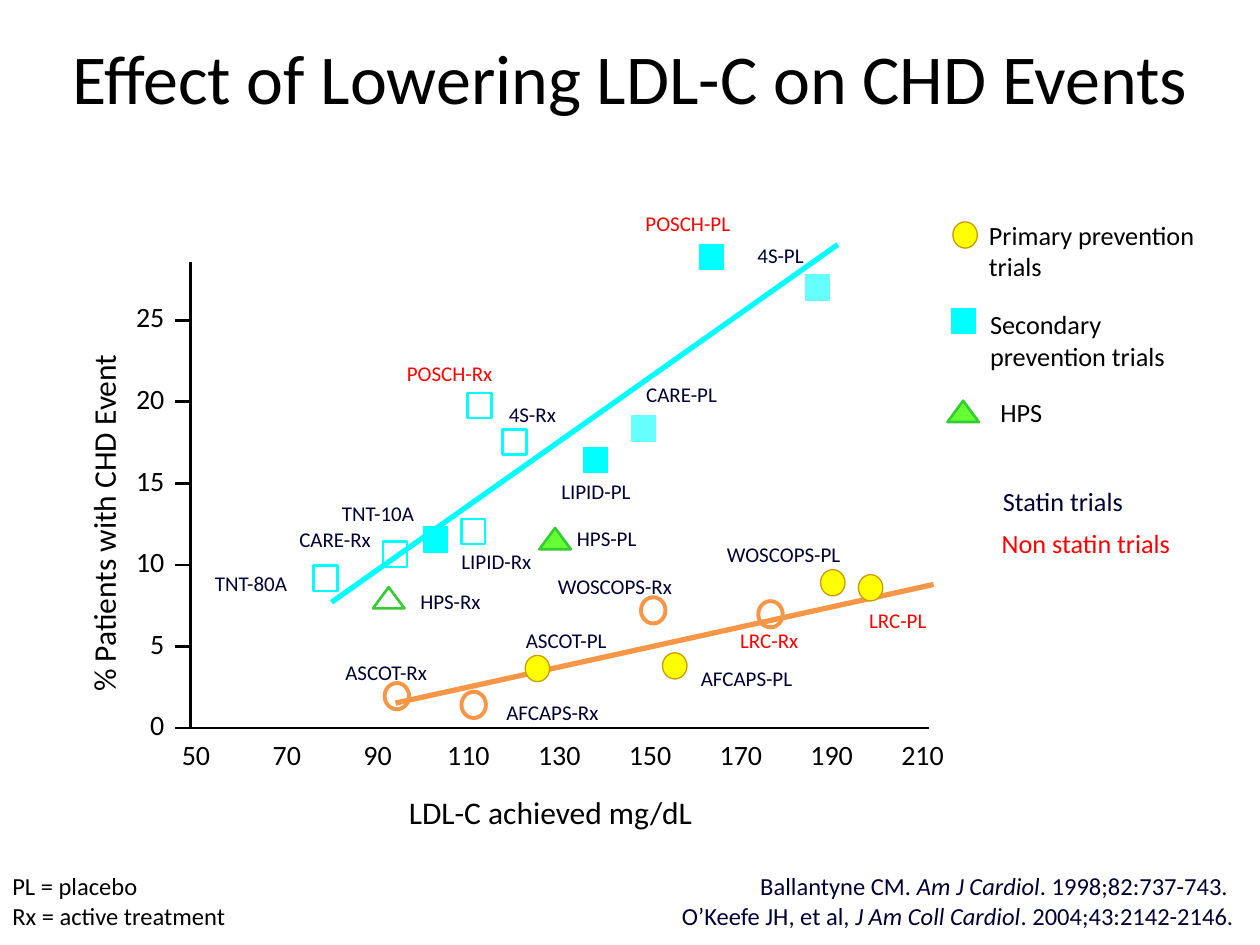
from collections import namedtuple
from dataclasses import dataclass

from lxml import etree
from pptx import Presentation
from pptx.dml.color import RGBColor
from pptx.enum import shapes, text
from pptx.oxml import ns
from pptx.util import Pt

Box = namedtuple("Box", "left top width height")
Marker = namedtuple("Marker", "kind width height fill line weight")
ALIGN = text.PP_ALIGN
ANCHOR = text.MSO_ANCHOR
KIND = shapes.MSO_SHAPE


@dataclass(frozen=True)
class Theme:
    font: str = "Calibri"
    black: str = "000000"
    navy: str = "000033"
    red: str = "FF0000"
    cyan: str = "00FFFF"
    pale_cyan: str = "66FFFF"
    orange: str = "F79646"
    yellow: str = "FFFF00"
    gold: str = "CC9900"
    green: str = "33CC33"
    lime: str = "66FF33"
    title_size: int = 40
    axis_title_size: int = 18
    tick_size: int = 16
    legend_size: int = 15
    footer_size: int = 14
    label_size: int = 12
    axis_weight: float = 1.5
    trend_weight: float = 3


THEME = Theme()
MARKERS = {
    "primary": Marker(KIND.OVAL, 14, 15, THEME.yellow, THEME.gold, 0.75),
    "primary treated": Marker(KIND.OVAL, 14, 15, None, THEME.orange, 2.25),
    "secondary": Marker(KIND.RECTANGLE, 13.7, 14.4, THEME.cyan, THEME.cyan, 0.75),
    "secondary pale": Marker(KIND.RECTANGLE, 13.7, 14.4, THEME.pale_cyan, THEME.pale_cyan, 0.75),
    "secondary treated": Marker(KIND.RECTANGLE, 13.7, 14.4, None, THEME.cyan, 1.5),
    "hps": Marker(KIND.ISOSCELES_TRIANGLE, 18, 12.2, THEME.lime, THEME.green, 1.5),
    "hps treated": Marker(KIND.ISOSCELES_TRIANGLE, 18, 12.2, None, THEME.green, 1.5),
}
TRIALS = [
    ("4S-PL", "secondary pale", (358, 14.2), (337, -4)),
    ("CARE-PL", "secondary pale", (258.6, 94.8), (280.5, 75.4)),
    ("LIPID-PL", "secondary", (231.2, 112.8), (231.6, 130.8)),
    ("4S-Rx", "secondary treated", (185.1, 102.7), (195.2, 86.9)),
    ("LIPID-Rx", "secondary treated", (161.4, 153.8), (174.7, 170.4)),
    ("CARE-Rx", "secondary treated", (116.7, 166.8), (82.5, 158.2)),
    ("TNT-80A", "secondary treated", (77.1, 180.5), (34.4, 183.4)),
    ("TNT-10A", "secondary", (139.8, 158.2), (107, 143)),
    ("POSCH-PL", "secondary", (297.4, -3.1), (284.1, -22.6)),
    ("POSCH-Rx", "secondary treated", (165, 81.8), (148, 63.1)),
    ("AFCAPS-PL", "primary", (276.6, 230.5), (317.6, 237.4)),
    ("AFCAPS-Rx", "primary treated", (161.7, 252.8), (206.7, 256.8)),
    ("WOSCOPS-PL", "primary", (366.9, 183), (338.8, 166.8)),
    ("WOSCOPS-Rx", "primary treated", (264.3, 198.8), (242.4, 184.8)),
    ("ASCOT-PL", "primary", (198.1, 232), (214.6, 215.8)),
    ("ASCOT-Rx", "primary treated", (117.8, 247.8), (111.7, 233.8)),
    ("LRC-PL", "primary", (388.5, 185.9), (404, 204.2)),
    ("LRC-Rx", "primary treated", (331.3, 201), (330.6, 215.8)),
    ("HPS-PL", "hps", (208.2, 157.8), (237.7, 157.4)),
    ("HPS-Rx", "hps treated", (113.1, 191.6), (148.4, 193.4)),
]
NON_STATIN = ("POSCH", "LRC")


def set_values(target, values):
    for name, value in values.items():
        setattr(target, name, value)


def in_points(box):
    return [Pt(length) for length in box]


def centred(x, y, width, height):
    return Box(x - width / 2, y - height / 2, width, height)


def fill_text(frame, lines, size, color, align):
    for index, runs in enumerate(lines):
        paragraph = frame.paragraphs[0] if index == 0 else frame.add_paragraph()
        paragraph.alignment = align
        for words, italic in runs:
            run = paragraph.add_run()
            run.text = words
            set_values(run.font, {"name": THEME.font, "size": Pt(size), "italic": italic})
            run.font.color.rgb = RGBColor.from_string(color)


def add_text(slide, box, lines, size, color=THEME.black, align=ALIGN.LEFT, anchor=ANCHOR.TOP):
    shape = slide.shapes.add_textbox(*in_points(box))
    set_values(shape.text_frame, {"word_wrap": True, "vertical_anchor": anchor})
    fill_text(shape.text_frame, lines, size, color, align)
    return shape


def add_label(slide, box, words, size, color=THEME.black, align=ALIGN.CENTER):
    return add_text(slide, box, [[(words, None)]], size, color, align, ANCHOR.MIDDLE)


def style_line(line, color, weight):
    line.color.rgb = RGBColor.from_string(color)
    line.width = Pt(weight)


def add_line(slide, start, end, color, weight):
    connector = slide.shapes.add_connector(
        shapes.MSO_CONNECTOR.STRAIGHT, *in_points((*start, *end)))
    style_line(connector.line, color, weight)
    etree.SubElement(connector._element.spPr, ns.qn("a:effectLst"))


def add_marker(slide, name, x, y):
    marker = MARKERS[name]
    box = centred(x, y, marker.width, marker.height)
    shape = slide.shapes.add_shape(marker.kind, *in_points(box))
    shape.shadow.inherit = False
    if marker.fill:
        shape.fill.solid()
        shape.fill.fore_color.rgb = RGBColor.from_string(marker.fill)
    else:
        shape.fill.background()
    style_line(shape.line, marker.line, marker.weight)


def add_title(slide, box, words):
    title = slide.shapes.title
    set_values(title, dict(zip(("left", "top", "width", "height"), in_points(box))))
    title.text_frame.vertical_anchor = ANCHOR.MIDDLE
    fill_text(title.text_frame, [[(words, None)]], THEME.title_size, THEME.black, ALIGN.CENTER)


def add_axes(slide, box):
    bottom = box.top + box.height
    builder = slide.shapes.build_freeform(Pt(box.left), Pt(box.top))
    builder.add_line_segments(
        [in_points((box.left, bottom)), in_points((box.left + box.width, bottom))], close=False)
    axes = builder.convert_to_shape()
    axes.shadow.inherit = False
    axes.fill.background()
    style_line(axes.line, THEME.black, THEME.axis_weight)

    for index, value in enumerate(range(0, 26, 5)):
        y = bottom - index * 46.6
        add_line(slide, (box.left, y), (box.left - 9, y), THEME.black, THEME.axis_weight)
        add_label(slide, Box(box.left - 41, y - 15.3, 33, 26.6), str(value),
                  THEME.tick_size, align=ALIGN.RIGHT)
    for index, value in enumerate(range(50, 211, 20)):
        place = centred(box.left + 3 + index * 51.9, bottom + 15, 41, 26.6)
        add_label(slide, place, str(value), THEME.tick_size)

    add_label(slide, centred(box.left + 205.6, bottom + 47.7, 200, 28.8),
              "LDL-C achieved mg/dL", THEME.axis_title_size)
    vertical = add_label(slide, centred(box.left - 50, box.top + 149, 276, 28.8),
                         "% Patients with CHD Event", THEME.axis_title_size)
    vertical.rotation = 270


def add_trials(slide, box):
    trends = [(THEME.orange, (117, 251.8), (424.5, 184)),
              (THEME.cyan, (80.4, 194.2), (369.8, -10.3))]
    for color, *ends in trends:
        start, end = [(box.left + x, box.top + y) for x, y in ends]
        add_line(slide, start, end, color, THEME.trend_weight)
    for name, marker, (x, y), (label_x, label_y) in TRIALS:
        add_marker(slide, marker, box.left + x, box.top + y)
        color = THEME.red if name.startswith(NON_STATIN) else THEME.navy
        place = centred(box.left + label_x, box.top + label_y, 9.2 * len(name), 21.6)
        add_label(slide, place, name, THEME.label_size, color)


def add_legend(slide, box):
    entries = [
        ("Primary prevention trials", THEME.black, 18, 0, 44, ("primary", 11.5, 12.6)),
        ("Secondary prevention trials", THEME.black, 18.7, 51, 44, ("secondary", 10.4, 61.9)),
        ("HPS", THEME.black, 24.5, 101.5, 25, ("hps", 10.4, 113.4)),
        ("Statin trials", THEME.navy, 26, 152, 25, None),
        ("Non statin trials", THEME.red, 25.3, 176, 25, None),
    ]
    for words, color, x, y, height, marker in entries:
        place = Box(box.left + x, box.top + y, box.width - 20, height)
        add_text(slide, place, [[(words, None)]], THEME.legend_size, color)
        if marker:
            name, marker_x, marker_y = marker
            add_marker(slide, name, box.left + marker_x, box.top + marker_y)


def add_footer(slide, box):
    key = [[("PL = placebo", None)], [("Rx = active treatment", None)]]
    references = [
        [("Ballantyne CM. ", None), ("Am J Cardiol", True), (". 1998;82:737-743. ", None)],
        [("O’Keefe JH, et al, ", None), ("J Am Coll Cardiol", True),
         (". 2004;43:2142-2146.", None)],
    ]
    add_text(slide, Box(box.left, box.top, 216, box.height), key, THEME.footer_size)
    add_text(slide, Box(box.left + box.width - 394, box.top, 394, box.height), references,
             THEME.footer_size, THEME.navy, ALIGN.RIGHT)


def main():
    presentation = Presentation()
    set_values(presentation, {"slide_width": Pt(720), "slide_height": Pt(540)})
    slide = presentation.slides.add_slide(presentation.slide_layouts[5])
    plot = Box(109, 150, 422, 266)
    add_title(slide, Box(0, 0, 720, 88), "Effect of Lowering LDL-C on CHD Events")
    add_axes(slide, plot)
    add_trials(slide, plot)
    add_legend(slide, Box(540, 121.7, 160, 201))
    add_footer(slide, Box(0, 494.3, 712, 41))
    presentation.save("out.pptx")


if __name__ == "__main__":
    main()
